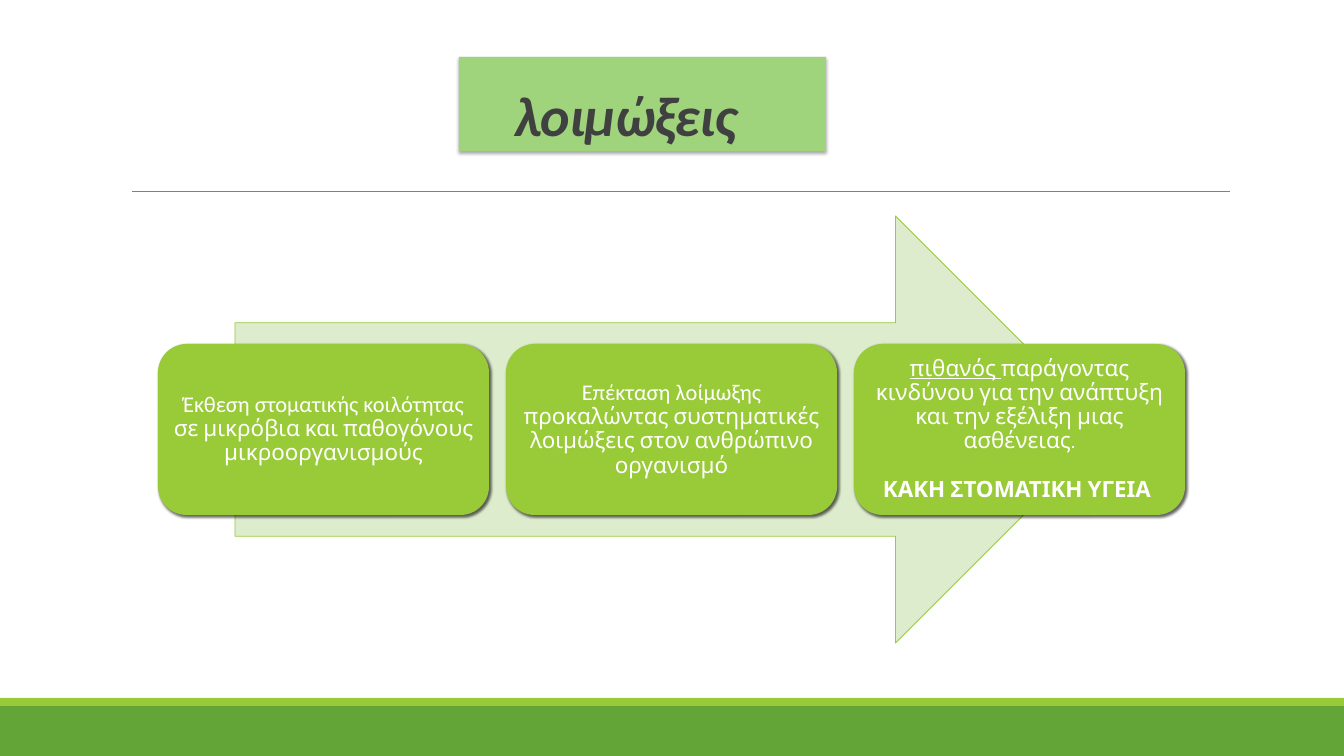
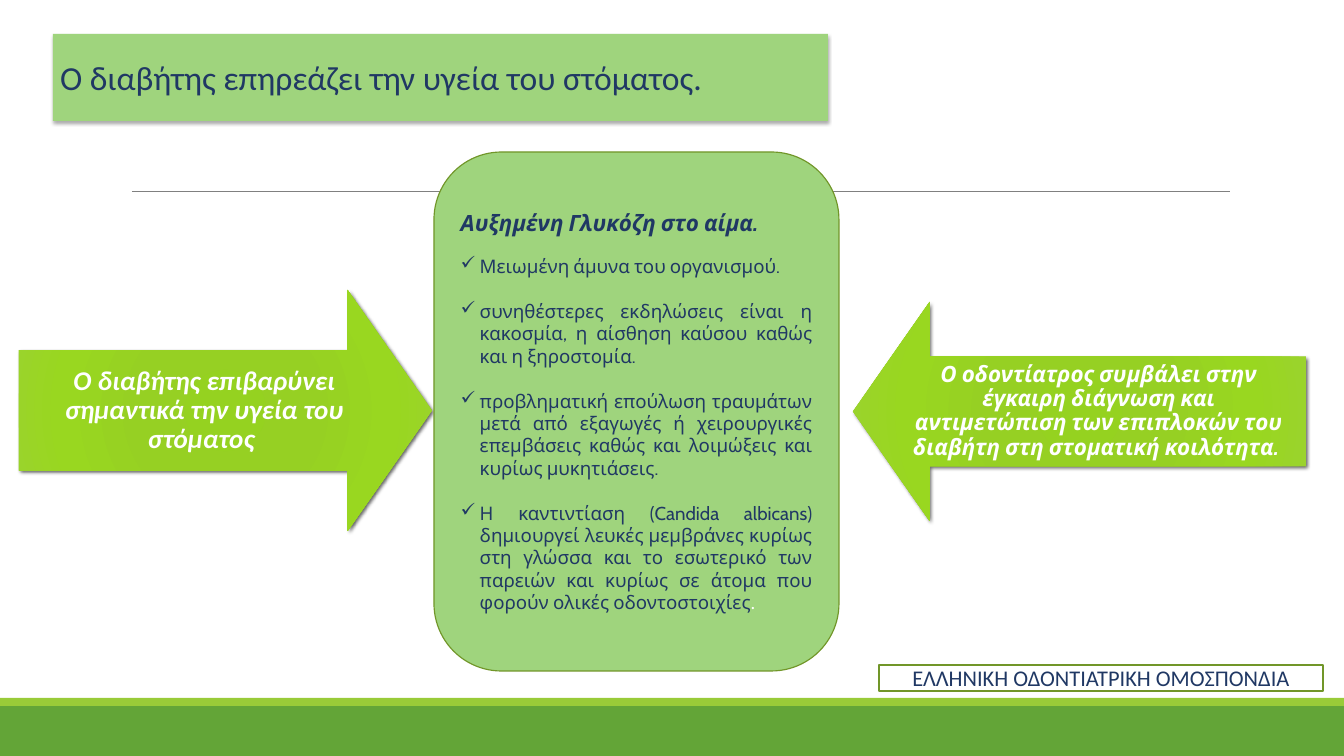
from lxml.etree import SubElement
from pptx import Presentation
from pptx.dml.color import RGBColor
from pptx.enum.shapes import MSO_CONNECTOR, MSO_SHAPE
from pptx.enum.text import MSO_ANCHOR, PP_ALIGN
from pptx.oxml import parse_xml
from pptx.oxml.ns import nsdecls, qn
from pptx.util import Pt

PX = 914400 / 67.2
WHITE, DARK, NAVY, GRAY = "FFFFFF", "404040", "203864", "808080"
GREEN, LIME, SOFT, PALE, OLIVE = "63A537", "99CB38", "9FD47D", "DEECCE", "719629"
ARROW_STOPS = ((0, "95D220"), (34, "96D023"), (70, "99D720"), (100, "9BD231"))
TITLE_SHADOW = (32, 3.5, 2.2, 90)
CARD_SHADOW = (60, 3, 2, 45)
ARROW_SHADOW = (60, 3.5, 2, 45)
RULE_Y = 191
PLAIN = {"name": "Calibri", "size": Pt(24)}
CABIN = {"name": "Cabin", "size": Pt(24)}
STRONG = {"bold": True, "italic": True}


def px(value):
    return round(value * PX)


def color(code):
    return RGBColor.from_string(code)


def add_shadow(shape, alpha, blur, distance, angle):
    effects = shape._element.spPr.find(qn("a:effectLst"))
    effects.append(parse_xml(
        f'<a:outerShdw {nsdecls("a")} blurRad="{Pt(blur)}" dist="{Pt(distance)}" '
        f'dir="{angle * 60000}" algn="ctr" rotWithShape="0"><a:srgbClr val="000000">'
        f'<a:alpha val="{alpha * 1000}"/></a:srgbClr></a:outerShdw>'))


def add_box(page, kind, box, fill=None, line=None, width=1.25, shadow=None):
    shape = page.shapes.add_shape(kind, *map(px, box))
    shape.shadow.inherit = False
    if fill:
        shape.fill.solid()
        shape.fill.fore_color.rgb = color(fill)
    else:
        shape.fill.background()
    if line:
        shape.line.color.rgb = color(line)
        shape.line.width = Pt(width)
    else:
        shape.line.fill.background()
    if shadow:
        add_shadow(shape, *shadow)
    return shape


def set_frame(shape, anchor=MSO_ANCHOR.MIDDLE, sides=(7, 3, 7, 3)):
    frame = shape.text_frame
    frame.word_wrap = True
    frame.vertical_anchor = anchor
    names = ("margin_left", "margin_top", "margin_right", "margin_bottom")
    for name, side in zip(names, sides):
        setattr(frame, name, px(side))


def write(shape, paragraphs, tint, **layout):
    frame = shape.text_frame
    for index, spans in enumerate(paragraphs):
        para = frame.add_paragraph() if index else frame.paragraphs[0]
        for name, value in layout.items():
            setattr(para, name, value)
        for text, style in spans:
            span = para.add_run()
            span.text = text
            span.font.color.rgb = color(tint)
            for name, value in style.items():
                setattr(span.font, name, value)
    return frame.paragraphs


def add_base(deck):
    page = deck.slides.add_slide(deck.slide_layouts[6])
    add_box(page, MSO_SHAPE.RECTANGLE, (0, 706, 1344, 50), GREEN)
    add_box(page, MSO_SHAPE.RECTANGLE, (0, 698, 1344, 8), LIME)
    rule = page.shapes.add_connector(
        MSO_CONNECTOR.STRAIGHT, *map(px, (132, RULE_Y, 1230, RULE_Y)))
    rule.line.color.rgb = color(GRAY)
    rule.line.width = Pt(0.5)
    SubElement(rule._element.spPr, qn("a:effectLst"))
    return page


def add_title(page, box, text, style, tint, anchor, inset, **layout):
    title = add_box(page, MSO_SHAPE.RECTANGLE, box, SOFT, shadow=TITLE_SHADOW)
    set_frame(title, anchor, (inset, 3, 7, 3))
    return write(title, [[(text, style)]], tint, alignment=PP_ALIGN.LEFT, **layout)


def add_process(page, box, cards):
    left, top, width, height = box
    add_box(page, MSO_SHAPE.RIGHT_ARROW, (left + 77, top, 874, height), PALE, LIME, 1)
    card_width, card_height = 331, 171
    step = (width - card_width) / (len(cards) - 1)
    for index, paragraphs in enumerate(cards):
        place = (left + index * step, top + (height - card_height) / 2,
                 card_width, card_height)
        card = add_box(page, MSO_SHAPE.ROUNDED_RECTANGLE, place, LIME, shadow=CARD_SHADOW)
        set_frame(card, sides=(7, 7, 7, 7))
        lines = write(card, paragraphs, WHITE, alignment=PP_ALIGN.CENTER, line_spacing=0.9)
        for para in lines[1:]:
            para.space_before = Pt(26)


def add_arrow(page, kind, box, inset, text, style):
    arrow = add_box(page, kind, box, LIME, shadow=ARROW_SHADOW)
    arrow.adjustments[1] = 0.35
    stops = "".join(f'<a:gs pos="{place * 1000}"><a:srgbClr val="{code}"/></a:gs>'
                    for place, code in ARROW_STOPS)
    properties = arrow._element.spPr
    properties.replace(properties.find(qn("a:solidFill")), parse_xml(
        f'<a:gradFill {nsdecls("a")} rotWithShape="1"><a:gsLst>{stops}</a:gsLst>'
        '<a:path path="circle"><a:fillToRect l="100000" t="100000" r="100000" b="100000"/>'
        '</a:path></a:gradFill>'))
    set_frame(arrow, sides=(inset,) * 4)
    write(arrow, [[(text, style | STRONG)]], WHITE,
          alignment=PP_ALIGN.CENTER, line_spacing=0.9)


def add_panel(page, box, heading, points):
    panel = add_box(page, MSO_SHAPE.ROUNDED_RECTANGLE, box, SOFT, OLIVE)
    set_frame(panel)
    body = CABIN | {"size": Pt(20)}
    lines = [[(heading, CABIN | STRONG)]] + [[(point, body)] for point in points]
    paragraphs = write(panel, lines, NAVY, alignment=PP_ALIGN.JUSTIFY)
    for index, para in enumerate(paragraphs[1:]):
        para.space_before = Pt(24 if index else 20)
        properties = para._p.get_or_add_pPr()
        properties.set("marL", str(px(19)))
        properties.set("indent", str(px(-19)))
        SubElement(properties, qn("a:buChar"), char="✓")
    stop = paragraphs[-1].add_run()
    stop.text = "."
    stop.font.name = "Calibri"
    stop.font.size = Pt(20)
    stop.font.color.rgb = color(WHITE)


def add_source(page, box, text):
    label = add_box(page, MSO_SHAPE.RECTANGLE, box, line=OLIVE)
    set_frame(label)
    write(label, [[(text, PLAIN)]], NAVY, alignment=PP_ALIGN.CENTER)


def build_infections(deck):
    page = add_base(deck)
    title = add_title(page, (459, 57, 367, 94), "λοιμώξεις",
                      PLAIN | STRONG | {"size": Pt(60)}, DARK,
                      MSO_ANCHOR.BOTTOM, 56, line_spacing=0.85)
    title[0].runs[0]._r.get_or_add_rPr().set("spc", "-80")
    add_process(page, (158, 216, 1027, 427), [
        [[("Έκθεση στοματικής κοιλότητας ", PLAIN),
          ("σε μικρόβια και παθογόνους μικροοργανισμούς", CABIN)]],
        [[("Επέκταση λοίμωξης ", PLAIN),
          ("προκαλώντας συστηματικές λοιμώξεις στον ανθρώπινο οργανισμό", CABIN)]],
        [[("πιθανός ", CABIN | {"underline": True}),
          ("παράγοντας κινδύνου για την ανάπτυξη και την εξέλιξη μιας ασθένειας.", CABIN)],
         [("ΚΑΚΗ ΣΤΟΜΑΤΙΚΗ ΥΓΕΙΑ ", CABIN | {"bold": True})]],
    ])


def build_diabetes(deck):
    page = add_base(deck)
    add_arrow(page, MSO_SHAPE.RIGHT_ARROW, (19, 290, 413, 241), 15,
              "Ο διαβήτης επιβαρύνει σημαντικά την υγεία του στόματος ",
              PLAIN | {"size": Pt(29)})
    add_arrow(page, MSO_SHAPE.LEFT_ARROW, (853, 302, 453, 219), 13,
              "Ο οδοντίατρος συμβάλει στην έγκαιρη διάγνωση και αντιμετώπιση "
              "των επιπλοκών του διαβήτη στη στοματική κοιλότητα. ", CABIN)
    add_title(page, (53, 34, 775, 87), "Ο διαβήτης επηρεάζει την υγεία του στόματος.",
              PLAIN | {"size": Pt(36)}, NAVY, MSO_ANCHOR.MIDDLE, 7)
    add_source(page, (879, 665, 444, 26), "ΕΛΛΗΝΙΚΗ ΟΔΟΝΤΙΑΤΡΙΚΗ ΟΜΟΣΠΟΝΔΙΑ")
    add_panel(page, (434, 152, 405, 519), "Αυξημένη Γλυκόζη στο αίμα.", [
        "Μειωμένη άμυνα του οργανισμού.",
        "συνηθέστερες εκδηλώσεις είναι η κακοσμία, η αίσθηση καύσου "
        "καθώς και η ξηροστομία.",
        "προβληματική επούλωση τραυμάτων μετά από εξαγωγές ή χειρουργικές "
        "επεμβάσεις καθώς και λοιμώξεις και κυρίως μυκητιάσεις. ",
        "Η καντιντίαση (Candida albicans) δημιουργεί λευκές μεμβράνες κυρίως "
        "στη γλώσσα και το εσωτερικό των παρειών και κυρίως σε άτομα "
        "που φορούν ολικές οδοντοστοιχίες",
    ])


def main():
    deck = Presentation()
    deck.slide_width, deck.slide_height = px(1344), px(756)
    build_infections(deck)
    build_diabetes(deck)
    deck.save("out.pptx")


if __name__ == "__main__":
    main()
